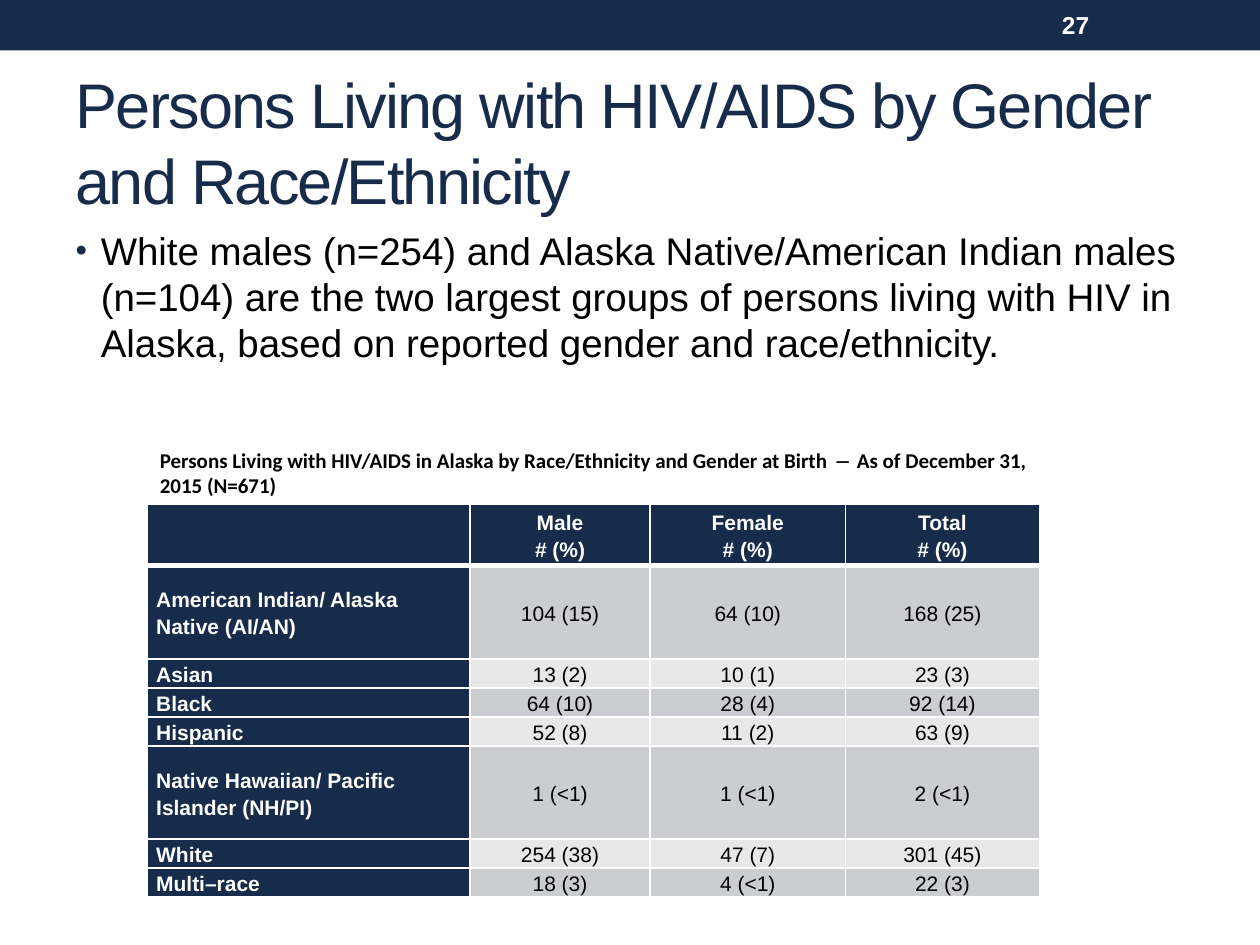
from lxml import etree
from pptx import Presentation
from pptx.dml.color import RGBColor
from pptx.enum.shapes import MSO_SHAPE
from pptx.enum.text import MSO_ANCHOR, MSO_AUTO_SIZE, PP_ALIGN
from pptx.oxml.ns import qn
from pptx.util import Inches, Pt

RECT = MSO_SHAPE.RECTANGLE
MIDDLE, TOP = MSO_ANCHOR.MIDDLE, MSO_ANCHOR.TOP
LEFT, CENTER = PP_ALIGN.LEFT, PP_ALIGN.CENTER
NO_FIT = MSO_AUTO_SIZE.NONE

COLORS = {"navy": "172B4B", "white": "FFFFFF", "black": "000000",
          "dark": "CCCDD0", "light": "E8E8E9"}

TITLE = "Persons Living with HIV/AIDS by Gender and Race/Ethnicity"
POINT = ("White males (n=254) and Alaska Native/American Indian males (n=104) "
         "are the two largest groups of persons living with HIV in Alaska, "
         "based on reported gender and race/ethnicity.")
CAPTION = [
    ("Persons Living with HIV/AIDS in Alaska by Race/Ethnicity "
     "and Gender at Birth ", False),
    ("― ", True),
    ("As of December 31, 2015 (N=671)", False),
]
ROWS = [
    ("", "Male\n# (%)", "Female\n# (%)", "Total\n# (%)"),
    ("American Indian/ Alaska Native (AI/AN)", "104 (15)", "64 (10)", "168 (25)"),
    ("Asian", "13 (2)", "10 (1)", "23 (3)"),
    ("Black", "64 (10)", "28 (4)", "92 (14)"),
    ("Hispanic", "52 (8)", "11 (2)", "63 (9)"),
    ("Native Hawaiian/ Pacific Islander (NH/PI)", "1 (<1)", "1 (<1)", "2 (<1)"),
    ("White", "254 (38)", "47 (7)", "301 (45)"),
    ("Multi–race", "18 (3)", "4 (<1)", "22 (3)"),
]
WIDTHS = [2.56, 1.43, 1.55, 1.54]
HEIGHTS = [0.49, 0.74, 0.23, 0.23, 0.23, 0.74, 0.23, 0.23]


def rgb(name):
    return RGBColor.from_string(COLORS[name])


def assign(item, values):
    for key, value in values.items():
        setattr(item, key, value)


def style(font, size, color, name="Arial", bold=False, italic=False):
    assign(font, {"size": Pt(size), "name": name, "bold": bold,
                  "italic": italic})
    font.color.rgb = rgb(color)


def place(shape, left, top, width, height):
    assign(shape, {"left": Inches(left), "top": Inches(top),
                   "width": Inches(width), "height": Inches(height)})


def set_frame(shape, anchor):
    frame = shape.text_frame
    assign(frame, {"word_wrap": True, "auto_size": NO_FIT,
                   "vertical_anchor": anchor})
    return frame


def add_band(slide):
    band = slide.shapes.add_shape(RECT, 0, 0, Inches(10), Inches(0.4))
    band.shadow.inherit = False
    band.fill.solid()
    band.fill.fore_color.rgb = rgb("navy")
    band.line.fill.background()


def add_title(slide):
    title = slide.shapes.title
    place(title, 0.5, 0.58, 9, 1.08)
    para = set_frame(title, MIDDLE).paragraphs[0]
    para.alignment = LEFT
    run = para.add_run()
    run.text = TITLE
    style(run.font, 36, "navy")
    run.font._element.set("spc", "-100")


def add_body(slide):
    body = slide.placeholders[1]
    place(body, 0.5, 1.75, 9, 1.58)
    para = set_frame(body, TOP).paragraphs[0]
    assign(para, {"alignment": LEFT, "space_before": Pt(4.4)})
    run = para.add_run()
    run.text = POINT
    style(run.font, 22, "black")
    # Navy bullet with a hanging indent
    props = para._p.get_or_add_pPr()
    props.set("marL", str(Inches(0.2)))
    props.set("indent", str(-Inches(0.2)))
    tint = etree.SubElement(props, qn("a:buClr"))
    etree.SubElement(tint, qn("a:srgbClr"), val=COLORS["navy"])
    etree.SubElement(props, qn("a:buSzPct"), val="85000")
    etree.SubElement(props, qn("a:buFont"), typeface="Arial")
    etree.SubElement(props, qn("a:buChar"), char="•")


def add_text(slide, box, runs, size, color, font):
    shape = slide.shapes.add_textbox(*map(Inches, box))
    para = set_frame(shape, MIDDLE).paragraphs[0]
    for text, italic in runs:
        run = para.add_run()
        run.text = text
        style(run.font, size, color, font, True, italic)


def set_edges(cell, row):
    props = cell._tc.get_or_add_tcPr()
    thick = {0: "lnB", 1: "lnT"}.get(row)
    for spot, tag in enumerate(("lnL", "lnR", "lnT", "lnB")):
        width = Pt(3 if tag == thick else 1)
        line = etree.Element(qn("a:" + tag), w=str(width))
        fill = etree.SubElement(line, qn("a:solidFill"))
        etree.SubElement(fill, qn("a:srgbClr"), val=COLORS["white"])
        props.insert(spot, line)


def fill_cell(cell, text, row, col):
    head = row == 0 or col == 0
    assign(cell, {"text": text, "vertical_anchor": MIDDLE,
                  "margin_left": Inches(0.07), "margin_right": Inches(0.07),
                  "margin_top": 0, "margin_bottom": 0})
    cell.fill.solid()
    shade = "navy" if head else "dark" if row % 2 else "light"
    cell.fill.fore_color.rgb = rgb(shade)
    for para in cell.text_frame.paragraphs:
        assign(para, {"alignment": CENTER if col else LEFT,
                      "line_spacing": 1.15})
        style(para.font, 12, "white" if head else "black", bold=head)
        for run in para.runs:
            style(run.font, 12, "white" if head else "black", bold=head)
    set_edges(cell, row)


def add_grid(slide):
    box = map(Inches, (1.17, 4, sum(WIDTHS), sum(HEIGHTS)))
    grid = slide.shapes.add_table(len(ROWS), len(WIDTHS), *box).table
    for col, width in zip(grid.columns, WIDTHS):
        col.width = Inches(width)
    for row, height in zip(grid.rows, HEIGHTS):
        row.height = Inches(height)
    for r, texts in enumerate(ROWS):
        for c, text in enumerate(texts):
            fill_cell(grid.cell(r, c), text, r, c)


def main():
    deck = Presentation()
    assign(deck, {"slide_width": Inches(10), "slide_height": Inches(7.5)})
    slide = deck.slides.add_slide(deck.slide_layouts[1])
    # Header band, title and key point
    add_band(slide)
    add_title(slide)
    add_body(slide)
    # Page number
    add_text(slide, (8.33, 0.02, 1.17, 0.36), [("27", False)],
             14, "white", "Arial")
    # Table and its caption
    add_grid(slide)
    add_text(slide, (1.17, 3.5, 7.08, 0.5), CAPTION, 12, "black", "Calibri")
    deck.save("out.pptx")


if __name__ == "__main__":
    main()
